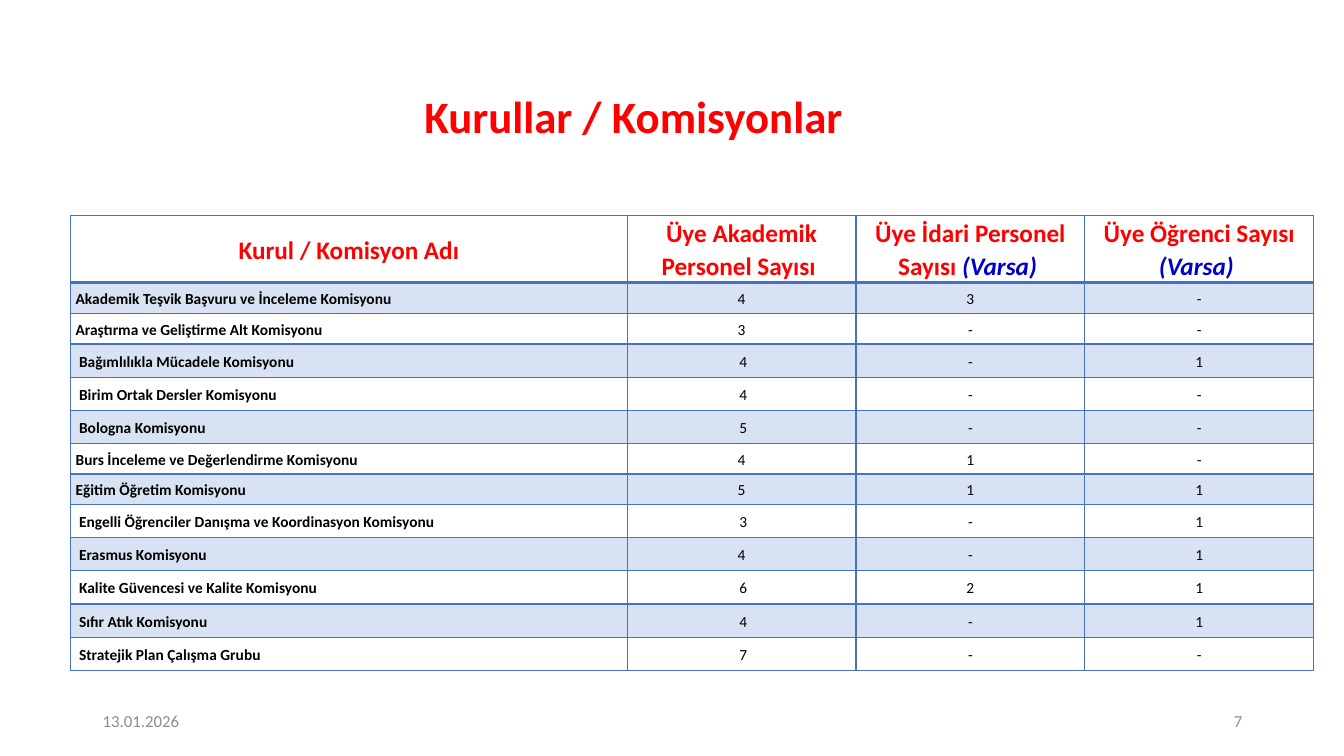
from dataclasses import dataclass

from lxml import etree
from pptx import Presentation
from pptx import util as u
from pptx.dml import color
from pptx.enum import text
from pptx.oxml import ns


@dataclass(frozen=True)
class Theme:
    """Colours, type sizes and font of the slide."""
    font: str = "Calibri"
    heading: str = "FF0000"
    optional: str = "0000CC"
    body: str = "000000"
    footer: str = "8C8C8C"
    accent: str = "4472C4"
    title_size: int = 32
    header_size: int = 18
    body_size: int = 11
    footer_size: int = 12


THEME = Theme()
HEADERS = [
    ("Kurul / Komisyon Adı", ""),
    ("Üye Akademik Personel Sayısı ", ""),
    ("Üye İdari Personel Sayısı ", "(Varsa) "),
    ("Üye Öğrenci Sayısı ", "(Varsa) "),
]
COMMISSIONS = [
    ("Akademik Teşvik Başvuru ve İnceleme Komisyonu", "4", "3", "-"),
    ("Araştırma ve Geliştirme Alt Komisyonu", "3", "-", "-"),
    (" Bağımlılıkla Mücadele Komisyonu", " 4", "-", "1"),
    (" Birim Ortak Dersler Komisyonu", " 4", "-", "-"),
    (" Bologna Komisyonu", " 5", "-", "-"),
    ("Burs İnceleme ve Değerlendirme Komisyonu", "4", "1", "-"),
    ("Eğitim Öğretim Komisyonu", "5", "1", "1"),
    (" Engelli Öğrenciler Danışma ve Koordinasyon Komisyonu", " 3", "-", "1"),
    (" Erasmus Komisyonu", "4", "-", "1"),
    (" Kalite Güvencesi ve Kalite Komisyonu", " 6", "2", "1"),
    (" Sıfır Atık Komisyonu", " 4", "-", "1"),
    (" Stratejik Plan Çalışma Grubu", " 7", "-", "-"),
]
COLUMN_WIDTHS = [5.52, 2.27, 2.27, 2.27]
ROW_HEIGHTS = [0.66, 0.31, 0.3] + [0.33] * 3 + [0.3] * 2 + [0.33] * 5


def style(run, size, tint, bold=False, italic=False):
    """Format one run in the slide font."""
    run.font.name = THEME.font
    run.font.size = u.Pt(size)
    run.font.color.rgb = color.RGBColor.from_string(tint)
    run.font.bold = bold
    run.font.italic = italic


def add_title(slide, left, top, width, height):
    """Place and format the title placeholder."""
    title = slide.shapes.title
    title.left, title.top = u.Inches(left), u.Inches(top)
    title.width, title.height = u.Inches(width), u.Inches(height)
    frame = title.text_frame
    frame.text = "Kurullar / Komisyonlar"
    frame.vertical_anchor = text.MSO_ANCHOR.MIDDLE
    heading = frame.paragraphs[0]
    heading.alignment = text.PP_ALIGN.CENTER
    heading.line_spacing = 0.9
    style(heading.runs[0], THEME.title_size, THEME.heading, bold=True)


def add_footer(slide, wording, align, left, top, width, height):
    """Place one footer entry in its box."""
    footer = slide.shapes.add_textbox(*map(u.Inches, (left, top, width, height)))
    frame = footer.text_frame
    frame.word_wrap = True
    frame.vertical_anchor = text.MSO_ANCHOR.MIDDLE
    frame.text = wording
    frame.paragraphs[0].alignment = align
    style(frame.paragraphs[0].runs[0], THEME.footer_size, THEME.footer)


def draw_borders(cell, row):
    """Outline a cell, with a heavier rule below the header."""
    properties = cell._tc.get_or_add_tcPr()
    heavy_side = {0: "lnB", 1: "lnT"}.get(row)
    for side in ("lnL", "lnR", "lnT", "lnB"):
        weight = u.Pt(2 if side == heavy_side else 1)
        line = etree.SubElement(properties, ns.qn(f"a:{side}"), w=str(int(weight)))
        fill = etree.SubElement(line, ns.qn("a:solidFill"))
        etree.SubElement(fill, ns.qn("a:srgbClr"), val=THEME.accent)


def fill_cell(cell, row):
    """Tint odd body rows and leave the others clear."""
    if row % 2 == 0:
        cell.fill.background()
        return
    cell.fill.solid()
    cell.fill.fore_color.rgb = color.RGBColor.from_string(THEME.accent)
    tint = cell._tc.tcPr.find(f"{ns.qn('a:solidFill')}/{ns.qn('a:srgbClr')}")
    etree.SubElement(tint, ns.qn("a:alpha"), val="20000")


def format_cell(cell, row, column):
    """Set margins, alignment, borders and fill, and return the paragraph."""
    cell.margin_left = cell.margin_right = u.Inches(0.01 if column else 0.05)
    cell.margin_top, cell.margin_bottom = u.Inches(0.01), 0
    cell.vertical_anchor = text.MSO_ANCHOR.MIDDLE
    draw_borders(cell, row)
    fill_cell(cell, row)
    paragraph = cell.text_frame.paragraphs[0]
    centred = row == 0 or column > 0
    paragraph.alignment = text.PP_ALIGN.CENTER if centred else text.PP_ALIGN.LEFT
    paragraph.line_spacing = 1.07
    return paragraph


def add_commissions(slide, left, top):
    """Build the commission table from its top left corner."""
    table = slide.shapes.add_table(
        len(ROW_HEIGHTS), len(COLUMN_WIDTHS), u.Inches(left), u.Inches(top),
        u.Inches(sum(COLUMN_WIDTHS)), u.Inches(sum(ROW_HEIGHTS))).table
    table.first_row = table.horz_banding = False
    for column, width in zip(table.columns, COLUMN_WIDTHS):
        column.width = u.Inches(width)
    for row, height in zip(table.rows, ROW_HEIGHTS):
        row.height = u.Inches(height)
    for column, (label, note) in enumerate(HEADERS):
        header = format_cell(table.cell(0, column), 0, column)
        header.text = label
        style(header.runs[0], THEME.header_size, THEME.heading, bold=True)
        if note:
            optional = header.add_run()
            optional.text = note
            style(optional, THEME.header_size, THEME.optional, bold=True, italic=True)
    for row, commission in enumerate(COMMISSIONS, 1):
        for column, value in enumerate(commission):
            entry = format_cell(table.cell(row, column), row, column)
            entry.text = value
            style(entry.runs[0], THEME.body_size, THEME.body, bold=column == 0)


def main():
    """Build and save the slide."""
    deck = Presentation()
    deck.slide_width, deck.slide_height = u.Inches(13.33), u.Inches(7.5)
    slide = deck.slides.add_slide(deck.slide_layouts[5])
    add_title(slide, 0.7, 0.78, 11.17, 0.8)
    add_commissions(slide, 0.7, 2.14)
    add_footer(slide, "13.01.2026", text.PP_ALIGN.LEFT, 0.92, 6.95, 3, 0.4)
    add_footer(slide, "7", text.PP_ALIGN.RIGHT, 9.42, 6.95, 3, 0.4)
    deck.save("out.pptx")


if __name__ == "__main__":
    main()
